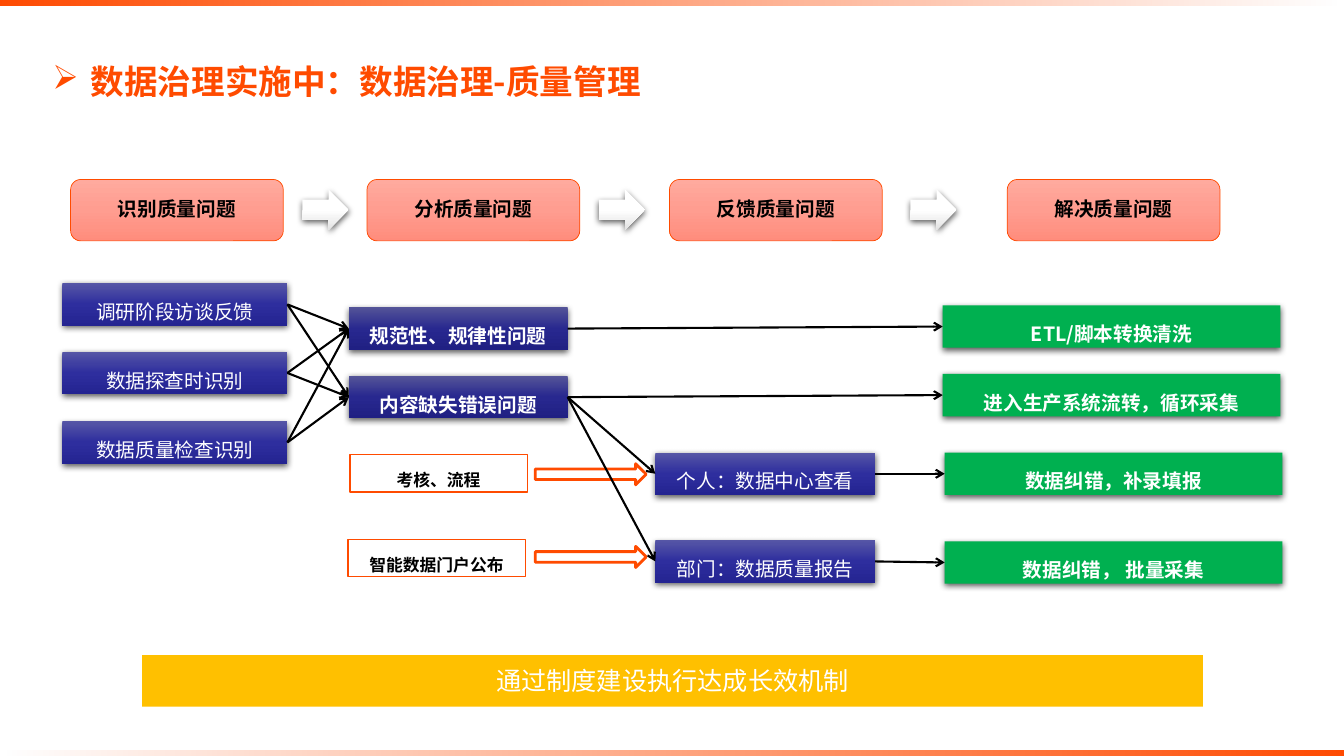
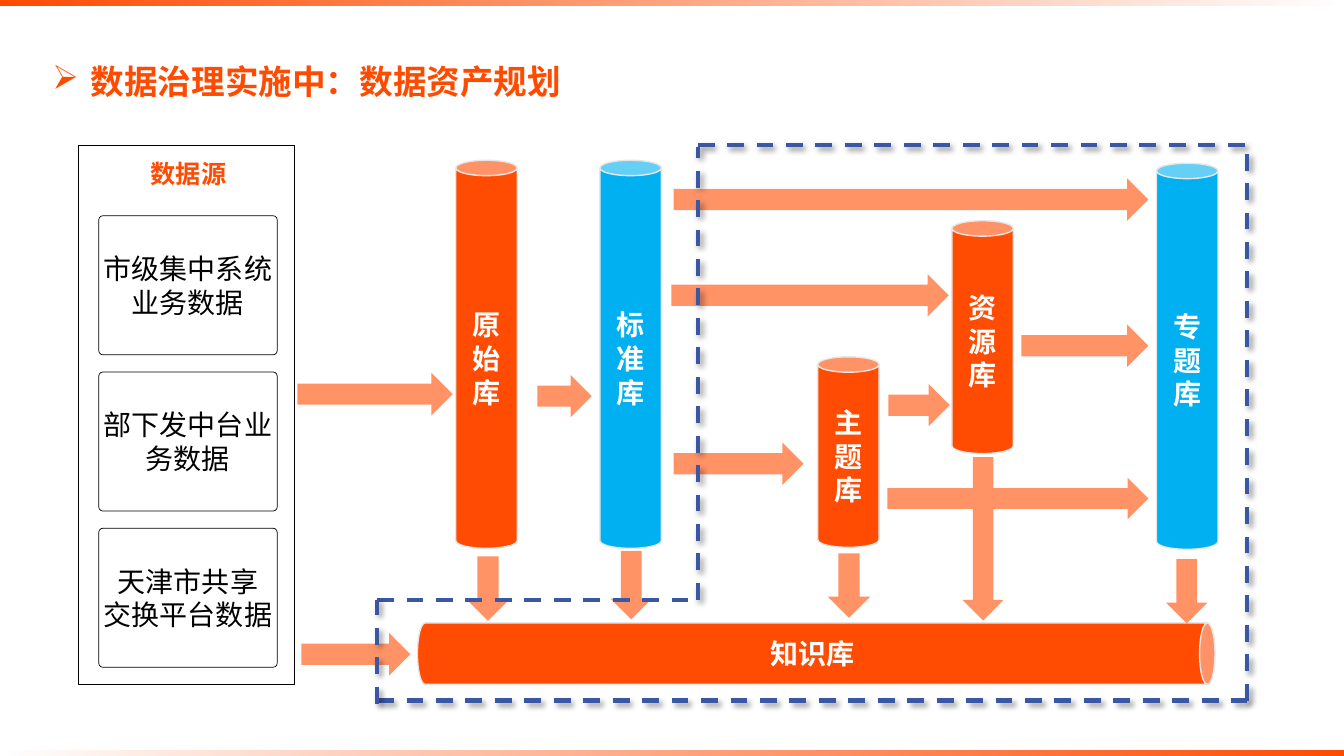
"""Builds two data-governance slides: quality management and data asset planning."""
from dataclasses import dataclass
from typing import NamedTuple

from lxml import etree
from pptx import Presentation
from pptx.dml.color import RGBColor
from pptx.enum.dml import MSO_LINE
from pptx.enum.shapes import MSO_CONNECTOR, MSO_SHAPE
from pptx.enum.text import MSO_ANCHOR, MSO_AUTO_SIZE, PP_ALIGN
from pptx.oxml.ns import qn
from pptx.shapes.autoshape import Shape
from pptx.shapes.connector import Connector
from pptx.slide import Slide
from pptx.util import Emu, Pt

RECT = MSO_SHAPE.RECTANGLE
ROUNDED = MSO_SHAPE.ROUNDED_RECTANGLE
ARROW = MSO_SHAPE.RIGHT_ARROW
CAN = MSO_SHAPE.CAN
STRAIGHT = MSO_CONNECTOR.STRAIGHT
DASH = MSO_LINE.DASH
TOP, MIDDLE = MSO_ANCHOR.TOP, MSO_ANCHOR.MIDDLE
LEFT, CENTER = PP_ALIGN.LEFT, PP_ALIGN.CENTER
GROW = MSO_AUTO_SIZE.SHAPE_TO_FIT_TEXT
LEFT_SIDE, RIGHT_SIDE = 1, 3

EMU_PER_PX = 9144
SLIDE_W, SLIDE_H = 1333, 750
BAND_H = 5
FONT = "Noto Sans CJK SC"

BRAND = RGBColor(0xFF, 0x4B, 0x00)
ORANGE = RGBColor(0xFF, 0x4C, 0x02)
PEACH = RGBColor(0xFF, 0x93, 0x66)
SKY = RGBColor(0x00, 0xB0, 0xF0)
GREEN = RGBColor(0x00, 0xB0, 0x50)
GOLD = RGBColor(0xFF, 0xC0, 0x00)
NAVY = RGBColor(0x39, 0x57, 0xA3)
PALE = RGBColor(0xE7, 0xE6, 0xE6)
WHITE = RGBColor(0xFF, 0xFF, 0xFF)
BLACK = RGBColor(0x00, 0x00, 0x00)


@dataclass(frozen=True)
class Gradient:
    stops: tuple[tuple[int, RGBColor, int], ...]
    angle: int = 90


def shade(top: str, middle: str, bottom: str) -> Gradient:
    """Return a downward gradient of three opaque colours."""
    colours = (top, middle, bottom)
    return Gradient(tuple((50 * i, RGBColor.from_string(c), 100) for i, c in enumerate(colours)))


SALMON = shade("FFAA9E", "FF9D90", "FF8C7C")
SILVER = shade("FFFFFF", "FFFFFF", "E3E3E3")
BLUE = shade("5656A6", "2E2E9E", "242491")
DEEP_BLUE = shade("545498", "28288F", "202083")


class Box(NamedTuple):
    x: int
    y: int
    w: int
    h: int


class Border(NamedTuple):
    colour: RGBColor
    width: float


class Shadow(NamedTuple):
    opacity: int
    blur: float
    distance: float
    angle: int


class Style(NamedTuple):
    size: int
    colour: RGBColor
    bold: bool = False
    spacing: float = 1.0
    align: PP_ALIGN = CENTER
    anchor: MSO_ANCHOR = MIDDLE
    grow: bool = False


class Node(NamedTuple):
    text: str
    box: Box
    fill: RGBColor | Gradient
    style: Style


class Flow(NamedTuple):
    box: Box
    rotation: int = 0


class Store(NamedTuple):
    text: str
    box: Box
    fill: RGBColor


SOFT = Shadow(63, 4.5, 1.5, 90)
DIAGONAL = Shadow(40, 4, 3, 45)

TITLE = Style(24, BRAND, True, align=LEFT)
STEP = Style(14, BLACK, True, 0.9)
PLAIN = Style(14, WHITE, False, 1.5, anchor=TOP, grow=True)
STRONG = PLAIN._replace(bold=True)
NOTE = Style(12, BLACK, True, 1.5, anchor=TOP, grow=True)
SUMMARY = Style(18, WHITE)
SOURCE_HEAD = Style(18, ORANGE, True, anchor=TOP, grow=True)
SOURCE = Style(20, BLACK)
STORE = Style(20, WHITE, True)

STEPS = (("识别质量问题", 70), ("分析质量问题", 364), ("反馈质量问题", 664), ("解决质量问题", 999))
STEP_ARROWS = (300, 594, 903)
FOUND = tuple(
    Node(text, Box(62, 281 + round(68.5 * i), 223, 42), BLUE, PLAIN)
    for i, text in enumerate(("调研阶段访谈反馈", "数据探查时识别", "数据质量检查识别"))
)
ANALYSED = tuple(
    Node(text, Box(346, 305 + 68 * i, 217, 42), DEEP_BLUE, STRONG)
    for i, text in enumerate(("规范性、规律性问题", "内容缺失错误问题"))
)
REPORTED = tuple(
    Node(text, Box(650, 449 + 87 * i, 218, 42), BLUE, PLAIN)
    for i, text in enumerate(("个人：数据中心查看", "部门：数据质量报告"))
)
SOLVED = tuple(
    Node(text, Box(x, y, 335, 42), GREEN, STRONG)
    for text, x, y in (
        ("ETL/脚本转换清洗", 935, 303),
        ("进入生产系统流转，循环采集", 935, 371),
        ("数据纠错，补录填报", 937, 449),
        ("数据纠错， 批量采集", 937, 537),
    )
)
NOTES = (("考核、流程", Box(347, 451, 176, 37)), ("智能数据门户公布", Box(345, 535, 176, 37)))
NOTE_ARROWS = (460, 542)

SOURCES = ("市级集中系统业务数据", "部下发中台业务数据", "天津市共享\n交换平台数据")
STORES = (
    Store("原始库", Box(452, 159, 61, 385), ORANGE),
    Store("标准库", Box(595, 159, 61, 385), SKY),
    Store("主题库", Box(811, 354, 61, 189), ORANGE),
    Store("资源库", Box(944, 219, 61, 231), ORANGE),
    Store("专题库", Box(1147, 162, 61, 383), SKY),
)
KNOWLEDGE = Store("知识库", Box(779, 253, 61, 791), ORANGE)
FLOWS = (
    Flow(Box(295, 370, 154, 42)),
    Flow(Box(533, 372, 54, 42)),
    Flow(Box(668, 439, 129, 42)),
    Flow(Box(666, 272, 275, 42)),
    Flow(Box(881, 381, 61, 42)),
    Flow(Box(1013, 322, 126, 42)),
    Flow(Box(880, 474, 259, 41)),
    Flow(Box(668, 177, 471, 42)),
    Flow(Box(299, 628, 108, 42)),
    Flow(Box(452, 563, 64, 42), 90),
    Flow(Box(592, 560, 68, 41), 90),
    Flow(Box(810, 560, 64, 42), 90),
    Flow(Box(894, 514, 162, 41), 90),
    Flow(Box(1145, 566, 64, 41), 90),
)
ZONE_EDGES = (
    (692, 144, 1237, 144, DIAGONAL),
    (1237, 695, 1237, 142, DIAGONAL),
    (692, 595, 692, 146, DIAGONAL),
    (374, 695, 1237, 695, DIAGONAL),
    (374, 595, 692, 595, None),
    (374, 698, 374, 595, DIAGONAL),
)


def px(length: int) -> Emu:
    """Turn px into EMU."""
    return Emu(length * EMU_PER_PX)


def add_colour(parent: etree._Element, colour: RGBColor, opacity: int) -> None:
    """Append a colour with an opacity in percent."""
    srgb = etree.SubElement(parent, qn("a:srgbClr"), val=str(colour))
    etree.SubElement(srgb, qn("a:alpha"), val=str(opacity * 1000))


def set_effects(item: Shape | Connector, shadow: Shadow | None) -> None:
    """Replace the theme shadow by the given one or by none."""
    effects = etree.SubElement(item._element.spPr, qn("a:effectLst"))
    if shadow:
        outer = etree.SubElement(
            effects, qn("a:outerShdw"), blurRad=str(Pt(shadow.blur)),
            dist=str(Pt(shadow.distance)), dir=str(shadow.angle * 60000),
            algn="ctr", rotWithShape="0")
        add_colour(outer, BLACK, shadow.opacity)


def set_fill(shape: Shape, fill: RGBColor | Gradient) -> None:
    """Fill a shape with a colour or a gradient."""
    if not isinstance(fill, Gradient):
        shape.fill.solid()
        shape.fill.fore_color.rgb = fill
        return
    shape.fill.gradient()
    shape.fill.gradient_angle = (360 - fill.angle) % 360
    stops = shape._element.spPr.find(qn("a:gradFill")).find(qn("a:gsLst"))
    for stop in list(stops):
        stops.remove(stop)
    for position, colour, opacity in fill.stops:
        add_colour(etree.SubElement(stops, qn("a:gs"), pos=str(position * 1000)), colour, opacity)


def set_text(shape: Shape, text: str, style: Style, inset: int = 10) -> None:
    """Write text in one style, with a side inset in px."""
    frame = shape.text_frame
    frame.text = text
    frame.word_wrap = True
    frame.vertical_anchor = style.anchor
    frame.margin_left = frame.margin_right = px(inset)
    if style.grow:
        frame.auto_size = GROW
    for paragraph in frame.paragraphs:
        paragraph.alignment = style.align
        paragraph.line_spacing = style.spacing
        font = paragraph.font
        font.name, font.size, font.bold = FONT, Pt(style.size), style.bold
        font.color.rgb = style.colour
        defaults = paragraph._p.pPr.find(qn("a:defRPr"))
        etree.SubElement(defaults, qn("a:ea"), typeface=FONT)


def add_block(slide: Slide, kind: MSO_SHAPE, box: Box, fill: RGBColor | Gradient,
              border: Border | None = None, shadow: Shadow | None = None) -> Shape:
    """Draw a filled preset shape."""
    shape = slide.shapes.add_shape(kind, *map(px, box))
    set_effects(shape, shadow)
    set_fill(shape, fill)
    if border:
        shape.line.color.rgb = border.colour
        shape.line.width = Pt(border.width)
    else:
        shape.line.fill.background()
    return shape


def add_node(slide: Slide, node: Node) -> Shape:
    """Draw a shadowed box with its text."""
    shape = add_block(slide, RECT, node.box, node.fill, shadow=SOFT)
    set_text(shape, node.text, node.style)
    return shape


def add_line(slide: Slide, ends: tuple[int, int, int, int], border: Border,
             shadow: Shadow | None = None) -> Connector:
    """Draw a straight line."""
    line = slide.shapes.add_connector(STRAIGHT, *map(px, ends))
    line.line.color.rgb = border.colour
    line.line.width = Pt(border.width)
    set_effects(line, shadow)
    return line


def link(slide: Slide, start: Shape, end: Shape) -> None:
    """Join the right side of one box to the left side of another by an arrow."""
    arrow = add_line(slide, (0, 0, 0, 0), Border(BLACK, 1.5))
    arrow.begin_connect(start, RIGHT_SIDE)
    arrow.end_connect(end, LEFT_SIDE)
    etree.SubElement(arrow.line._get_or_add_ln(), qn("a:tailEnd"), type="arrow")


def add_store(slide: Slide, store: Store) -> Shape:
    """Draw a data store as a can."""
    can = add_block(slide, CAN, store.box, store.fill, Border(PALE, 1))
    set_text(can, store.text, STORE)
    return can


def new_slide(deck: Presentation, heading: str) -> Slide:
    """Add a blank slide with both bands and its title."""
    slide = deck.slides.add_slide(deck.slide_layouts[6])
    for y, angle in ((0, 0), (SLIDE_H - BAND_H, 180)):
        fade = Gradient(((0, BRAND, 100), (100, BRAND, 0)), angle)
        add_block(slide, RECT, Box(0, y, SLIDE_W, BAND_H), fade)
    title = slide.shapes.add_textbox(*map(px, Box(42, 40, 1262, 81)))
    set_text(title, heading, TITLE)
    properties = title.text_frame.paragraphs[0]._p.pPr
    properties.set("marL", str(px(38)))
    properties.set("indent", str(px(-38)))
    bullet = etree.Element(qn("a:buChar"), char="➢")
    properties.find(qn("a:defRPr")).addprevious(bullet)
    return slide


def draw_quality(slide: Slide) -> None:
    """Draw the four steps of quality management and their links."""
    for text, x in STEPS:
        step = add_block(slide, ROUNDED, Box(x, 178, 211, 61), SALMON, Border(BRAND, 0.5))
        set_text(step, text, STEP)
    for x in STEP_ARROWS:
        add_block(slide, ARROW, Box(x, 188, 46, 40), SILVER, shadow=SOFT)
    found, analysed, reported, solved = (
        [add_node(slide, node) for node in column]
        for column in (FOUND, ANALYSED, REPORTED, SOLVED)
    )
    for text, box in NOTES:
        set_text(add_block(slide, RECT, box, WHITE, Border(BRAND, 1)), text, NOTE)
    for y in NOTE_ARROWS:
        add_block(slide, ARROW, Box(531, y, 110, 21), WHITE, Border(BRAND, 2))
    pairs = [(start, end) for start in found for end in analysed]
    pairs += zip(analysed + reported, solved)
    pairs += [(analysed[1], report) for report in reported]
    for start, end in pairs:
        link(slide, start, end)
    summary = add_block(slide, RECT, Box(141, 650, 1052, 51), GOLD)
    set_text(summary, "通过制度建设执行达成长效机制", SUMMARY)


def draw_assets(slide: Slide) -> None:
    """Draw the data sources, the stores and the flows between them."""
    outline = Border(BLACK, 0.5)
    add_block(slide, RECT, Box(78, 144, 214, 535), WHITE, outline)
    set_text(add_block(slide, RECT, Box(100, 152, 174, 40), WHITE), "数据源", SOURCE_HEAD)
    for i, text in enumerate(SOURCES):
        source = add_block(slide, ROUNDED, Box(98, 214 + 155 * i, 177, 138), WHITE, outline)
        source.adjustments[0] = 0.03
        set_text(source, text, SOURCE, inset=0)
    for store in STORES:
        add_store(slide, store)
    knowledge = add_store(slide, KNOWLEDGE)
    knowledge.rotation = 90
    knowledge.text_frame._txBody.bodyPr.set("vert", "vert270")
    for flow in FLOWS:
        add_block(slide, ARROW, flow.box, PEACH).rotation = flow.rotation
    for *ends, shadow in ZONE_EDGES:
        add_line(slide, ends, Border(NAVY, 3), shadow).line.dash_style = DASH


def main() -> None:
    """Build and save the deck."""
    deck = Presentation()
    deck.slide_width, deck.slide_height = px(SLIDE_W), px(SLIDE_H)
    draw_quality(new_slide(deck, "数据治理实施中：数据治理-质量管理"))
    draw_assets(new_slide(deck, "数据治理实施中：数据资产规划"))
    deck.save("out.pptx")


if __name__ == "__main__":
    main()
